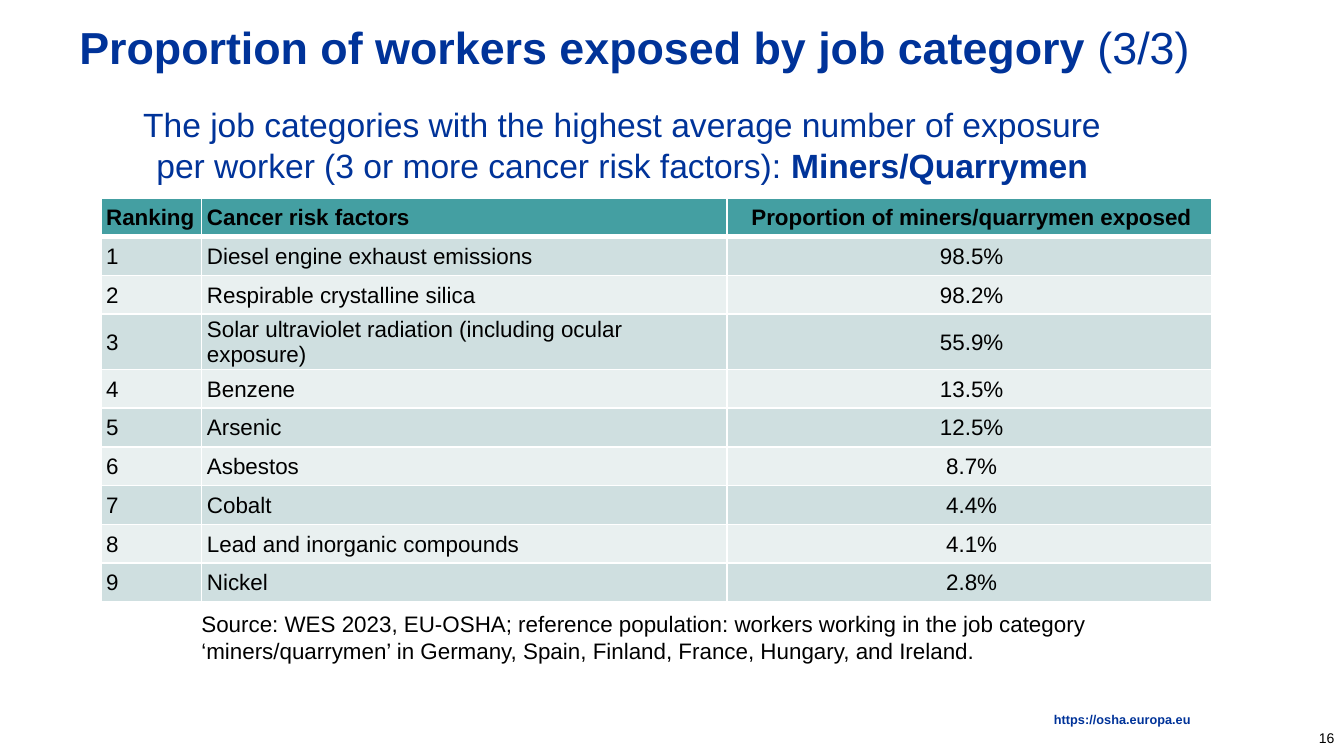
from lxml import etree
from pptx import Presentation, util as u
from pptx.dml.color import RGBColor
from pptx.enum import text
from pptx.oxml import ns

NAVY, BLACK, WHITE = "003399", "000000", "FFFFFF"
HEADER, BANDS = "449FA2", ("E9F0F0", "CFDFE0")
LEFT, CENTER, RIGHT = text.PP_ALIGN.LEFT, text.PP_ALIGN.CENTER, text.PP_ALIGN.RIGHT
TOP, MIDDLE = text.MSO_ANCHOR.TOP, text.MSO_ANCHOR.MIDDLE
BOX_INSETS, CELL_INSETS = (0.1, 0.05, 0.1, 0.05), (0.04, 0.01, 0.01, 0)

deck = Presentation()
deck.slide_width = u.Inches(10)
deck.slide_height = deck.slide_width * 9 // 16
page = deck.slides.add_slide(deck.slide_layouts[5])


def area(left, top, width, height):
    """Turn percentages of the slide's size into lengths."""
    wide, high = deck.slide_width / 100, deck.slide_height / 100
    return [round(n) for n in (left * wide, top * high, width * wide, height * high)]


def write(holder, spans, size, colour, align=LEFT, anchor=MIDDLE, insets=BOX_INSETS):
    """Fill a box or cell with (words, bold) spans."""
    frame = holder.text_frame
    frame.word_wrap = True
    # Cells keep their own margins and anchor; boxes keep them on the frame.
    owner = frame if hasattr(holder, "shape_id") else holder
    owner.margin_left, owner.margin_top, owner.margin_right, owner.margin_bottom = map(u.Inches, insets)
    owner.vertical_anchor = anchor
    para = frame.paragraphs[0]
    para.alignment = align
    for words, bold in spans:
        span = para.add_run()
        span.text = words
        span.font.name, span.font.size, span.font.bold = "Arial", u.Pt(size), bold
        span.font.color.rgb = RGBColor.from_string(colour)
    return para


title = page.shapes.title
title.left, title.top, title.width, title.height = area(4.9, 2.67, 85.3, 7.11)
write(title, [("Proportion of workers exposed by job category ", True), ("(3/3)", False)], 24, NAVY)
title.text_frame.auto_size = text.MSO_AUTO_SIZE.NONE

number = page.shapes.add_textbox(*area(93.3, 95, 6.7, 5.3))
write(number, [("16", False)], 7.5, BLACK, RIGHT, insets=(0.07, 0.04, 0.07, 0.04))

website = page.shapes.add_textbox(*area(24.8, 94.4, 63.8, 1.6))
para = write(website, [("https://osha.europa.eu", True)], 6.8, NAVY, RIGHT, TOP, (0, 0, 0, 0))
para.line_spacing = 0.9

intro = page.shapes.add_textbox(*area(8, 12.85, 76.6, 12.6))
write(intro, [
    ("The job categories with the highest average number of exposure per worker "
     "(3 or more cancer risk factors): ", False),
    ("Miners/Quarrymen", True),
], 18, NAVY, CENTER)

source = page.shapes.add_textbox(*area(14, 79.85, 68.1, 8.9))
write(source, [(
    "Source: WES 2023, EU-OSHA; reference population: workers working in the job category "
    "‘miners/quarrymen’ in Germany, Spain, Finland, France, Hungary, and Ireland.", False,
)], 12, BLACK, anchor=TOP)

for box in (intro, source):
    box.text_frame.auto_size = text.MSO_AUTO_SIZE.SHAPE_TO_FIT_TEXT

exposures = [
    ("Diesel engine exhaust emissions", "98.5%"),
    ("Respirable crystalline silica", "98.2%"),
    ("Solar ultraviolet radiation (including ocular exposure)", "55.9%"),
    ("Benzene", "13.5%"),
    ("Arsenic", "12.5%"),
    ("Asbestos", "8.7%"),
    ("Cobalt", "4.4%"),
    ("Lead and inorganic compounds", "4.1%"),
    ("Nickel", "2.8%"),
]
rows = [("Ranking", "Cancer risk factors", "Proportion of miners/quarrymen exposed")]
rows += [(str(rank), *exposure) for rank, exposure in enumerate(exposures, 1)]
column_shares = (7.5, 39.1, 36.1)
row_share = 5.13

ranking = page.shapes.add_table(
    len(rows), len(column_shares),
    *area(7.5, 26.2, sum(column_shares), row_share * len(rows))).table
for column, share in zip(ranking.columns, column_shares):
    column.width = round(deck.slide_width * share / 100)

for r, row in enumerate(rows):
    ranking.rows[r].height = round(deck.slide_height * row_share / 100)
    for c, words in enumerate(row):
        cell = ranking.cell(r, c)
        write(cell, [(words, r == 0)], 12, BLACK, CENTER if c == 2 else LEFT, insets=CELL_INSETS)
        for side in "LRTB":
            under_header = (r, side) in ((0, "B"), (1, "T"))
            border = etree.SubElement(cell._tc.get_or_add_tcPr(), ns.qn(f"a:ln{side}"),
                                      w=str(u.Pt(3 if under_header else 1)))
            fill = etree.SubElement(border, ns.qn("a:solidFill"))
            etree.SubElement(fill, ns.qn("a:srgbClr"), val=WHITE)
        cell.fill.solid()
        cell.fill.fore_color.rgb = RGBColor.from_string(BANDS[r % 2] if r else HEADER)

deck.save("out.pptx")
